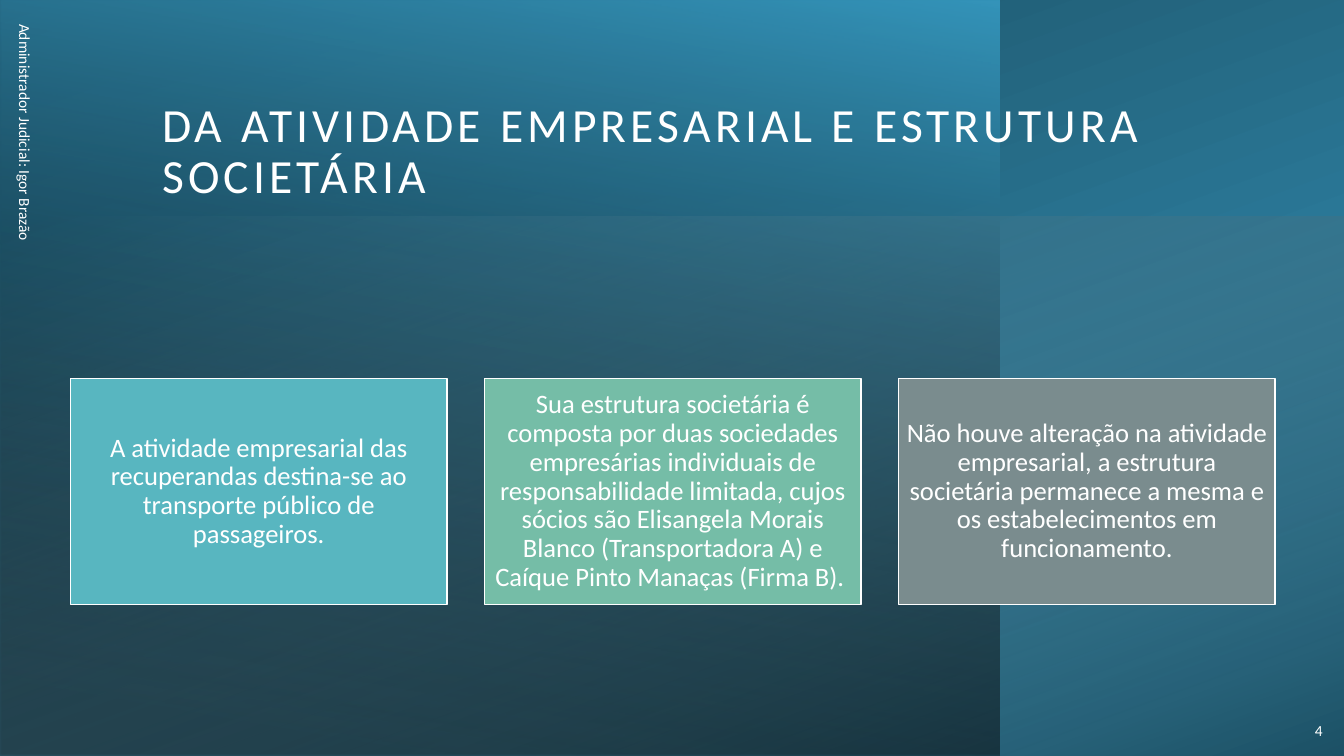
from lxml.etree import SubElement
from pptx import Presentation
from pptx.dml.color import RGBColor
from pptx.enum.shapes import MSO_SHAPE
from pptx.enum.text import MSO_ANCHOR, MSO_AUTO_SIZE, PP_ALIGN
from pptx.oxml.ns import qn
from pptx.util import Pt

WHITE = RGBColor(0xFF, 0xFF, 0xFF)
BLACK = RGBColor(0x00, 0x00, 0x00)
BLUE = RGBColor(0x34, 0x94, 0xBA)
NAVY = RGBColor(0x1A, 0x4A, 0x5D)
MIST = RGBColor(0xB5, 0xCD, 0xD3)
AQUA = RGBColor(0x58, 0xB6, 0xC0)
GREEN = RGBColor(0x75, 0xBD, 0xA7)
GRAY = RGBColor(0x7A, 0x8C, 0x8E)


def write(shape, text, size, align=PP_ALIGN.LEFT, anchor=MSO_ANCHOR.MIDDLE,
          leading=0.9, track=0):
    frame = shape.text_frame
    frame.word_wrap = True
    frame.auto_size = MSO_AUTO_SIZE.NONE
    frame.vertical_anchor = anchor
    para = frame.paragraphs[0]
    para.alignment = align
    para.line_spacing = leading
    run = para.add_run()
    run.text = text
    run.font.name = "Calibri"
    run.font.size = Pt(size)
    run.font.color.rgb = WHITE
    if track:
        run.font._element.set("spc", str(track * 100))


def add_rect(left, top, width, height):
    rect = slide.shapes.add_shape(MSO_SHAPE.RECTANGLE, Pt(left), Pt(top), Pt(width), Pt(height))
    rect.shadow.inherit = False
    return rect


deck = Presentation()
deck.slide_width, deck.slide_height = Pt(960), Pt(540)
slide = deck.slides.add_slide(deck.slide_layouts[5])
slide.background.fill.solid()
slide.background.fill.fore_color.rgb = WHITE

# Backdrop: box, rotation, clockwise angle, stops of (position, colour, opacity)
layers = [
    ((210, -210, 540, 960), 270, 200, [(0.08, BLUE, 100), (1, NAVY, 100)]),
    ((0, 0, 714.2, 540), 180, 80, [(0.08, BLACK, 52), (1, BLUE, 100)]),
    ((287.3, -132.6, 385.2, 960), 270, 20, [(0, MIST, 0), (1, BLACK, 46)]),
]
for box, turn, angle, stops in layers:
    layer = add_rect(*box)
    layer.rotation = turn
    layer._element.spPr.find(qn("a:xfrm")).set("flipH", "1")
    layer.line.fill.background()
    layer.fill.gradient()
    layer.fill.gradient_angle = 360 - angle
    for stop, (place, color, alpha) in zip(layer.fill.gradient_stops, stops):
        stop.position = place
        stop.color.rgb = color
        if alpha < 100:
            tint = stop._gs.find(qn("a:srgbClr"))
            SubElement(tint, qn("a:alpha"), val=str(alpha * 1000))

# Title, raised above the backdrop
title = slide.shapes.title
slide.shapes._spTree.append(title._element)
title.left, title.top, title.width, title.height = Pt(108.7), Pt(27.4), Pt(765.4), Pt(123.8)
title.text_frame.margin_bottom = Pt(5.5)
write(title, "DA ATIVIDADE EMPRESARIAL E ESTRUTURA SOCIETÁRIA", 34,
      anchor=MSO_ANCHOR.BOTTOM, track=3)

# Side label and page number
label = slide.shapes.add_textbox(Pt(-144), Pt(157.7), Pt(324), Pt(28.8))
label.rotation = 90
write(label, "Administrador Judicial: Igor Brazão", 11, leading=1)
page = slide.shapes.add_textbox(Pt(921.6), Pt(508.3), Pt(30.2), Pt(28.8))
write(page, "4", 11, align=PP_ALIGN.RIGHT)

# Cards
cards = [
    (AQUA, "A atividade empresarial das recuperandas destina-se ao transporte "
           "público de passageiros."),
    (GREEN, "Sua estrutura societária é composta por duas sociedades empresárias "
            "individuais de responsabilidade limitada, cujos sócios são Elisangela "
            "Morais Blanco (Transportadora A) e Caíque Pinto Manaças (Firma B). "),
    (GRAY, "Não houve alteração na atividade empresarial, a estrutura societária "
           "permanece a mesma e os estabelecimentos em funcionamento."),
]
for i, (color, text) in enumerate(cards):
    card = add_rect(50.4 + i * 295.8, 270.5, 268.8, 161.3)
    card.fill.solid()
    card.fill.fore_color.rgb = color
    card.line.color.rgb = WHITE
    card.line.width = Pt(1)
    frame = card.text_frame
    frame.margin_left = frame.margin_right = Pt(5.5)
    frame.margin_top = frame.margin_bottom = Pt(5.5)
    write(card, text, 19, align=PP_ALIGN.CENTER)

deck.save("out.pptx")
